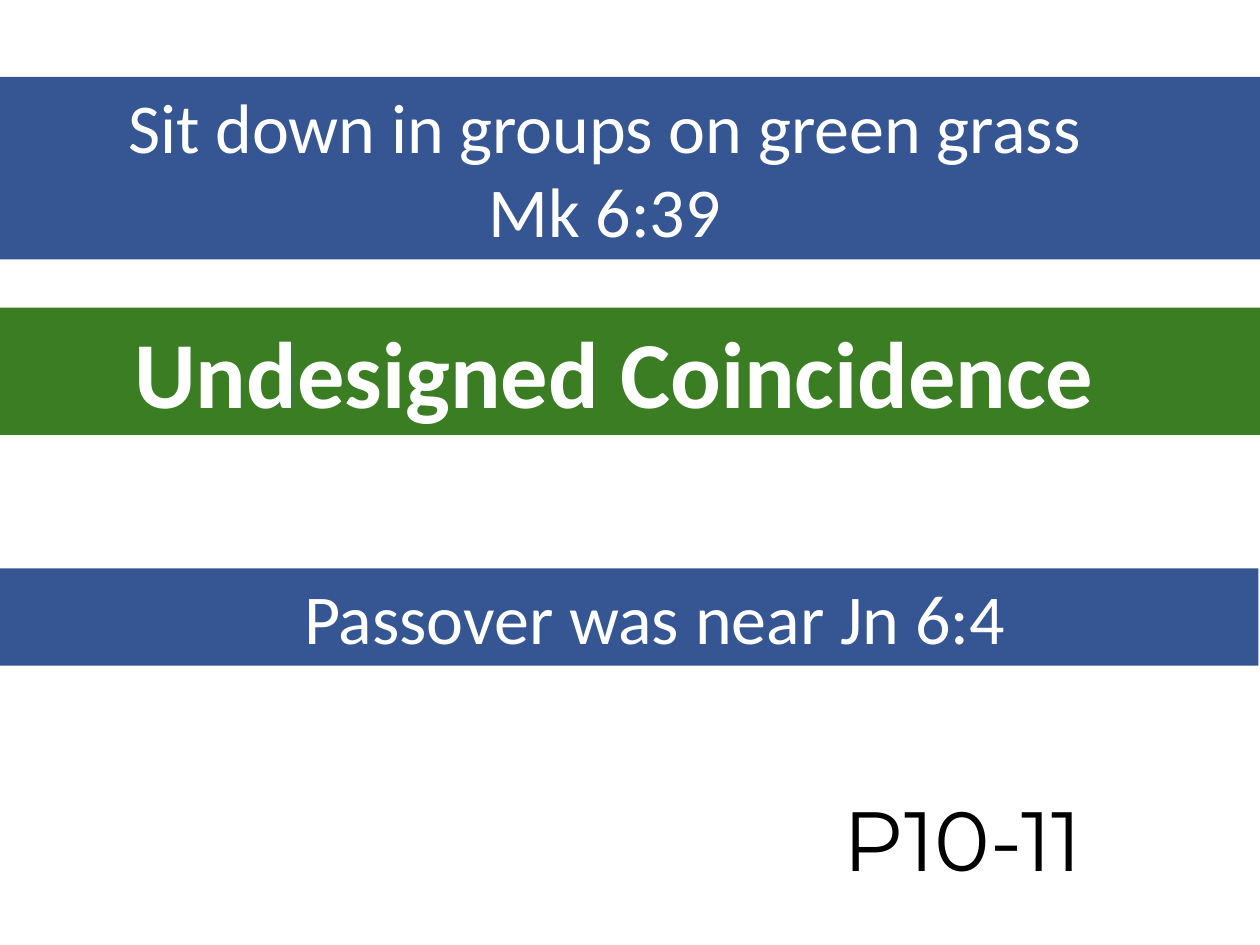
"""Build a slide with three coloured text bands and a page label."""
from pptx import Presentation
from pptx.dml.color import RGBColor
from pptx.enum.shapes import MSO_SHAPE
from pptx.enum.text import MSO_ANCHOR, PP_ALIGN
from pptx.util import Cm, Pt

RECT = MSO_SHAPE.RECTANGLE
TOP = MSO_ANCHOR.TOP
LEFT, MID = PP_ALIGN.LEFT, PP_ALIGN.CENTER
BLUE, GREEN, WHITE, BLACK = "365693", "3B7D23", "FFFFFF", "000000"
WIDE, HIGH = 25.4, 19.05
PAD = 0.25

BANDS = [
    {"text": "Sit down in groups on green grass\nMk 6:39", "fill": BLUE,
     "box": (0, 1.55, WIDE, 3.68), "pads": (PAD, 1.27), "size": 40, "bold": False},
    {"text": "Undesigned Coincidence", "fill": GREEN,
     "box": (-0.38, 6.2, 25.78, 2.57), "pads": (0, PAD), "size": 54, "bold": True},
    {"text": "Passover was near Jn 6:4", "fill": BLUE,
     "box": (0, 11.46, 25.37, 1.96), "pads": (1.27, PAD), "size": 40, "bold": False},
]
LABEL = {"text": "P10-11", "box": (16.76, 15.75, 7.04, 2.31), "size": 48}


def color(code):
    return RGBColor.from_string(code)


def write(shape, text, font, size, tint, align, pads=(PAD, PAD), bold=False):
    frame = shape.text_frame
    frame.text = text
    frame.word_wrap = True
    frame.vertical_anchor = TOP
    frame.margin_left, frame.margin_right = map(Cm, pads)
    for para in frame.paragraphs:
        para.alignment = align
        for run in para.runs:
            run.font.name = font
            run.font.size = Pt(size)
            run.font.bold = bold
            run.font.color.rgb = color(tint)


def main():
    deck = Presentation()
    deck.slide_width, deck.slide_height = Cm(WIDE), Cm(HIGH)
    shapes = deck.slides.add_slide(deck.slide_layouts[6]).shapes

    for band in BANDS:
        bar = shapes.add_shape(RECT, *map(Cm, band["box"]))
        bar.shadow.inherit = False
        bar.fill.solid()
        bar.fill.fore_color.rgb = color(band["fill"])
        bar.line.fill.background()
        write(bar, band["text"], "Calibri", band["size"], WHITE, MID,
              band["pads"], band["bold"])

    label = shapes.add_textbox(*map(Cm, LABEL["box"]))
    write(label, LABEL["text"], "Montserrat", LABEL["size"], BLACK, LEFT)
    deck.save("out.pptx")


if __name__ == "__main__":
    main()
